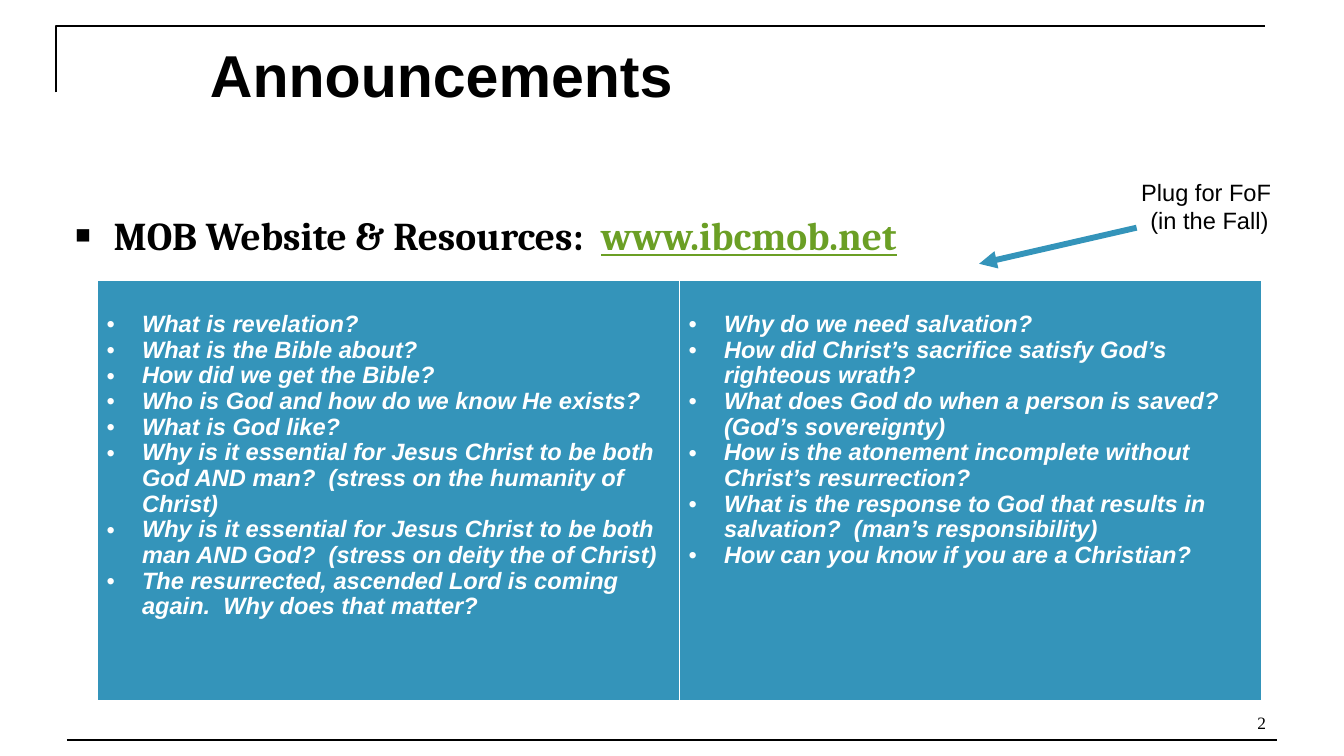
"""Build the Announcements slide with its two-column table of questions."""
from lxml.etree import SubElement
from pptx import Presentation
from pptx.dml.color import RGBColor
from pptx.enum.shapes import MSO_CONNECTOR
from pptx.enum.text import MSO_ANCHOR, PP_ALIGN
from pptx.oxml.ns import qn
from pptx.util import Pt

COLORS = {"black": "000000", "white": "FFFFFF", "blue": "3494BA", "green": "6B9F25"}


def add_run(paragraph, text, size, font="Arial", color="black", bold=False, italic=False):
    run = paragraph.add_run()
    run.text = text
    run.font.size = Pt(size)
    run.font.name = font
    run.font.bold = bold
    run.font.italic = italic
    run.font.color.rgb = RGBColor.from_string(COLORS[color])
    return run


def add_bullet(paragraph, character, indent, percent=100):
    properties = paragraph._p.get_or_add_pPr()
    properties.set("marL", str(Pt(indent)))
    properties.set("indent", str(-Pt(indent)))
    SubElement(properties, qn("a:buSzPct"), val=str(percent * 1000))
    SubElement(properties, qn("a:buFont"), typeface="Arial")
    SubElement(properties, qn("a:buChar"), char=character)


presentation = Presentation()
presentation.slide_width = Pt(1024)
presentation.slide_height = Pt(576)
slide = presentation.slides.add_slide(presentation.slide_layouts[6])

builder = slide.shapes.build_freeform(Pt(42.5), Pt(70.5))
builder.add_line_segments([(Pt(42.5), Pt(19.5)), (Pt(964), Pt(19.5))], close=False)
corner = builder.convert_to_shape()
corner.shadow.inherit = False
corner.fill.background()
corner.line.color.rgb = RGBColor.from_string(COLORS["black"])
corner.line.width = Pt(1.5)

connectors = {}
for name, start_x, start_y, end_x, end_y, color, width in [
    ("footer", 51, 564, 973, 564, "black", 1.5),
    ("arrow", 866, 173.5, 746, 201, "blue", 4.5),
]:
    connector = slide.shapes.add_connector(
        MSO_CONNECTOR.STRAIGHT, Pt(start_x), Pt(start_y), Pt(end_x), Pt(end_y)
    )
    connector.line.color.rgb = RGBColor.from_string(COLORS[color])
    connector.line.width = Pt(width)
    SubElement(connector._element.spPr, qn("a:effectLst"))
    connectors[name] = connector
SubElement(connectors["arrow"].line._get_or_add_ln(), qn("a:tailEnd"), type="triangle")

frames = {}
for name, left, top, width, height, anchor, inset in [
    ("title", 152, 23, 802, 67, MSO_ANCHOR.MIDDLE, 8),
    ("website", 49.5, 157.5, 949, 90, MSO_ANCHOR.TOP, 8),
    ("number", 733.5, 524, 239, 38, MSO_ANCHOR.BOTTOM, 8),
    ("plug", 844, 132, 155, 51, MSO_ANCHOR.TOP, 7.2),
]:
    box = slide.shapes.add_textbox(Pt(left), Pt(top), Pt(width), Pt(height))
    frame = box.text_frame
    frame.word_wrap = True
    frame.vertical_anchor = anchor
    frame.margin_left = frame.margin_right = Pt(inset)
    frame.margin_top = frame.margin_bottom = Pt(3.6)
    frames[name] = frame

add_run(frames["title"].paragraphs[0], "Announcements", 45, bold=True)

website = frames["website"].paragraphs[0]
add_bullet(website, "■", 29, 65)
add_run(website, "MOB Website & Resources:  ", 30, "Cambria", bold=True)
address = add_run(website, "www.ibcmob.net", 30, "Cambria", "green", bold=True)
address.font.underline = True

number = frames["number"].paragraphs[0]
number.alignment = PP_ALIGN.RIGHT
add_run(number, "2", 13.2, "Times New Roman")

for index, text in enumerate(["Plug for FoF ", "(in the Fall)"]):
    paragraph = frames["plug"].add_paragraph() if index else frames["plug"].paragraphs[0]
    paragraph.alignment = PP_ALIGN.CENTER
    add_run(paragraph, text, 18)

questions = [
    [
        "What is revelation?",
        "What is the Bible about?",
        "How did we get the Bible?",
        "Who is God and how do we know He exists?",
        "What is God like?",
        "Why is it essential for Jesus Christ to be both God AND man?  (stress on the humanity of Christ)",
        "Why is it essential for Jesus Christ to be both man AND God?  (stress on deity the of Christ)",
        "The resurrected, ascended Lord is coming again.  Why does that matter?",
    ],
    [
        "Why do we need salvation?",
        "How did Christ’s sacrifice satisfy God’s righteous wrath?",
        "What does God do when a person is saved?  (God’s sovereignty)",
        "How is the atonement incomplete without Christ’s resurrection?",
        "What is the response to God that results in salvation?  (man’s responsibility)",
        "How can you know if you are a Christian?",
    ],
]
table = slide.shapes.add_table(1, 2, Pt(74), Pt(214), Pt(887), Pt(320.5)).table
table.first_row = False
table.horz_banding = False
for cell, column_questions in zip(table.rows[0].cells, questions):
    cell_properties = cell._tc.get_or_add_tcPr()
    for side, width in [("L", 1), ("R", 1), ("T", 1), ("B", 3)]:
        border = SubElement(cell_properties, qn(f"a:ln{side}"), w=str(Pt(width)))
        border_fill = SubElement(border, qn("a:solidFill"))
        SubElement(border_fill, qn("a:srgbClr"), val=COLORS["white"])
    cell.fill.solid()
    cell.fill.fore_color.rgb = RGBColor.from_string(COLORS["blue"])
    cell.margin_left = cell.margin_right = Pt(7.2)
    cell.margin_top = Pt(23.8)
    cell.margin_bottom = Pt(3.6)
    for index, question in enumerate(column_questions):
        paragraph = cell.text_frame.add_paragraph() if index else cell.text_frame.paragraphs[0]
        add_bullet(paragraph, "•", 27)
        paragraph.line_spacing = 0.97
        add_run(paragraph, question, 18, color="white", bold=True, italic=True)

presentation.save("out.pptx")
